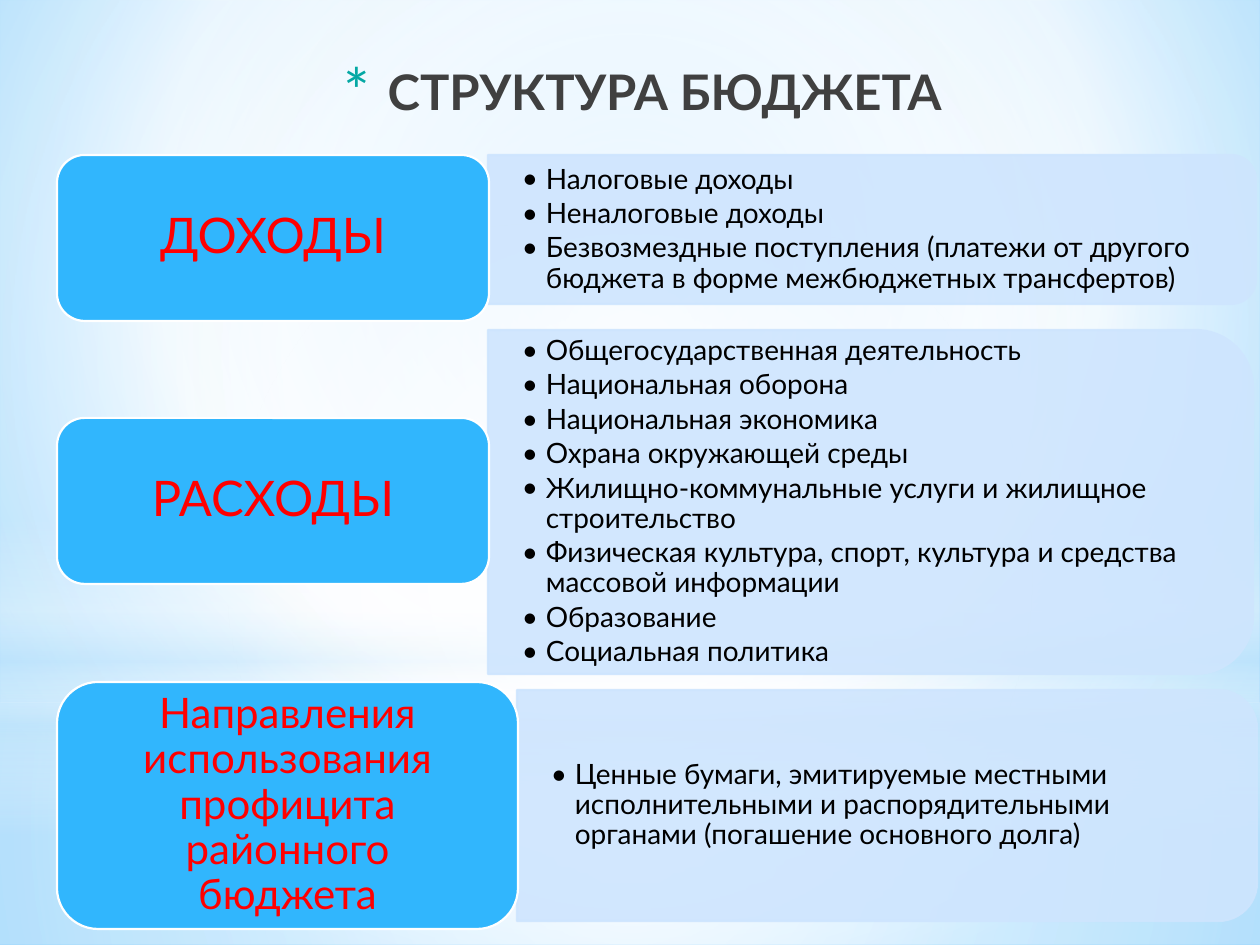
from pptx import Presentation
from pptx.dml.color import RGBColor
from pptx.enum.shapes import MSO_SHAPE
from pptx.enum.text import MSO_ANCHOR, PP_ALIGN
from pptx.oxml import parse_xml
from pptx.oxml.ns import nsdecls, qn
from pptx.util import Emu, Pt
from lxml.etree import SubElement


def px(length):
    return Emu(round(length * 914400 / 126))


def color(value):
    return RGBColor.from_string(value)


class BudgetSlide:
    """Style of the budget slide and a method for each kind of element."""

    FONT = "Lato"
    CARD, PANEL, WHITE = "31B6FD", "CEE5FE", "FFFFFF"
    LABEL, BODY, HEADING, ACCENT = "FF0000", "000000", "404040", "04A8A4"

    def __init__(self, slide):
        self.slide = slide

    def gradient(self, fill, element, stops, shade):
        fill.gradient()
        stop_xml = "".join(
            f'<a:gs pos="{at * 1000}"><a:srgbClr val="{hue}">'
            f'<a:alpha val="{alpha * 1000}"/></a:srgbClr></a:gs>'
            for at, hue, alpha in stops)
        if isinstance(shade, int):
            shade_xml = f'<a:lin ang="{shade * 60000}" scaled="0"/>'
        else:
            sides = " ".join(f'{side}="{share * 1000}"' for side, share in zip("ltrb", shade))
            shade_xml = f'<a:path path="circle"><a:fillToRect {sides}/></a:path>'
        old = next(element.iter(qn("a:gradFill")))
        old.getparent().replace(old, parse_xml(
            f'<a:gradFill rotWithShape="1" {nsdecls("a")}>'
            f'<a:gsLst>{stop_xml}</a:gsLst>{shade_xml}</a:gradFill>'))

    def background(self, stops, shade):
        self.gradient(self.slide.background.fill, self.slide.element, stops, shade)

    def shape(self, kind, x, y, w, h):
        shape = self.slide.shapes.add_shape(kind, px(x), px(y), px(w), px(h))
        shape.shadow.inherit = False
        return shape

    def glow(self, kind, box, stops, shade):
        glow = self.shape(kind, *box)
        glow.line.fill.background()
        self.gradient(glow.fill, glow.element, stops, shade)

    def paint(self, shape, fill, line):
        shape.fill.solid()
        shape.fill.fore_color.rgb = color(fill)
        shape.line.color.rgb = color(line)
        shape.line.width = Pt(1.25)

    def frame(self, shape, anchor, side, edge):
        frame = shape.text_frame
        frame.word_wrap = True
        frame.vertical_anchor = anchor
        frame.margin_left = frame.margin_right = px(side)
        frame.margin_top = frame.margin_bottom = px(edge)
        return frame

    def text_box(self, x, y, w, h, anchor, side, edge):
        box = self.slide.shapes.add_textbox(px(x), px(y), px(w), px(h))
        return self.frame(box, anchor, side, edge)

    def add_text(self, paragraph, text, size, hue, bold=False):
        run = paragraph.add_run()
        run.text = text
        run.font.name = self.FONT
        run.font.size = Pt(size)
        run.font.bold = bold
        run.font.color.rgb = color(hue)

    def bullet(self, paragraph, mark, indent, hue, percent):
        props = paragraph._p.get_or_add_pPr()
        props.set("marL", str(px(indent)))
        props.set("indent", str(-px(indent)))
        SubElement(SubElement(props, qn("a:buClr")), qn("a:srgbClr"), val=hue)
        SubElement(props, qn("a:buSzPct"), val=str(percent * 1000))
        SubElement(props, qn("a:buFont"), typeface=self.FONT)
        SubElement(props, qn("a:buChar"), char=mark)

    def title(self, text, *box):
        heading = self.text_box(*box, MSO_ANCHOR.TOP, 13, 6).paragraphs[0]
        heading.alignment = PP_ALIGN.CENTER
        self.bullet(heading, "*", 44, self.ACCENT, 128)
        self.add_text(heading, text, 28, self.HEADING, bold=True)

    def panel(self, items, x, y, w, h):
        panel = self.shape(MSO_SHAPE.ROUND_2_SAME_RECTANGLE,
                           x + (w - h) / 2, y + (h - w) / 2, h, w)
        panel.rotation = 90
        self.paint(panel, self.PANEL, self.PANEL)
        for hue in panel.element.spPr.iter(qn("a:srgbClr")):
            SubElement(hue, qn("a:alpha"), val="90000")
        frame = self.text_box(x, y, w - 8, h, MSO_ANCHOR.MIDDLE, 34, 0)
        for index, item in enumerate(items):
            entry = frame.add_paragraph() if index else frame.paragraphs[0]
            entry.line_spacing = 0.9
            entry.space_after = Pt(2.4)
            self.bullet(entry, "•", 24, self.BODY, 100)
            self.add_text(entry, item, 16, self.BODY)

    def card(self, text, size, x, y, w, h):
        card = self.shape(MSO_SHAPE.ROUNDED_RECTANGLE, x, y, w, h)
        self.paint(card, self.CARD, self.WHITE)
        label = self.frame(card, MSO_ANCHOR.MIDDLE, 23, 16).paragraphs[0]
        label.alignment = PP_ALIGN.CENTER
        label.line_spacing = 0.9
        self.add_text(label, text, size, self.LABEL)


def main():
    deck = Presentation()
    deck.slide_width, deck.slide_height = px(1260), px(945)
    budget = BudgetSlide(deck.slides.add_slide(deck.slide_layouts[6]))
    white, sky, center = "FFFFFF", "C6E7FC", (50, 50, 50, 50)

    budget.background([(0, "B0E0FF", 100), (60, white, 100), (100, "6BC5FF", 100)],
                      (20, 10, 20, 60))
    glows = [
        (MSO_SHAPE.RECTANGLE, (0, 703, 1260, 242),
         [(0, white, 91), (37, white, 76), (100, sky, 79)], center),
        (MSO_SHAPE.RECTANGLE, (0, 0, 1260, 703),
         [(0, white, 89), (48, white, 62), (100, sky, 79)], center),
        (MSO_SHAPE.RECTANGLE, (0, 519, 1260, 315),
         [(0, white, 0), (29, white, 30), (45, sky, 40),
          (55, white, 26), (65, sky, 60), (100, white, 0)], 90),
        (MSO_SHAPE.OVAL, (0, 220, 1260, 703),
         [(0, white, 100), (56, white, 0)], center),
    ]
    for glow in glows:
        budget.glow(*glow)

    budget.title("СТРУКТУРА БЮДЖЕТА", 194, 55, 897, 110)

    sections = [
        ("ДОХОДЫ", 28, (57, 155, 432, 166), (488, 155, 768, 149),
         ["Налоговые доходы",
          "Неналоговые доходы",
          "Безвозмездные поступления (платежи от другого бюджета "
          "в форме межбюджетных трансфертов)"]),
        ("РАСХОДЫ", 28, (57, 418, 432, 166), (488, 330, 765, 344),
         ["Общегосударственная деятельность",
          "Национальная оборона",
          "Национальная экономика",
          "Охрана окружающей среды",
          "Жилищно-коммунальные услуги и жилищное строительство",
          "Физическая культура, спорт, культура и средства массовой информации",
          "Образование",
          "Социальная политика"]),
        ("Направления использования профицита районного бюджета", 24,
         (57, 682, 461, 247), (517, 690, 740, 231),
         ["Ценные бумаги, эмитируемые местными исполнительными и "
          "распорядительными органами (погашение основного долга)"]),
    ]
    for label, size, card_box, panel_box, items in sections:
        budget.panel(items, *panel_box)
        budget.card(label, size, *card_box)

    deck.save("out.pptx")


if __name__ == "__main__":
    main()
